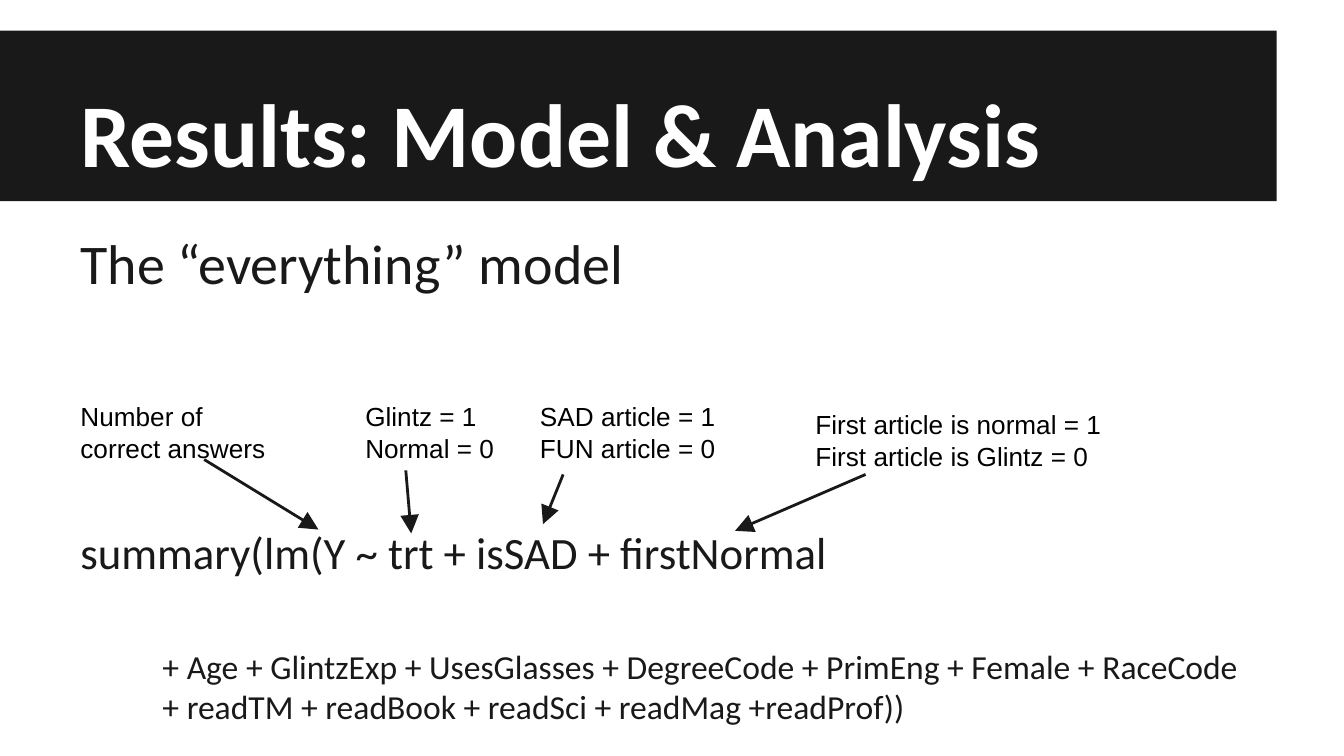
"""Builds the slide that explains the terms of the full regression model."""
from lxml import etree
from pptx import Presentation
from pptx.dml.color import RGBColor
from pptx.enum.shapes import MSO_CONNECTOR, MSO_SHAPE
from pptx.enum.text import MSO_ANCHOR
from pptx.oxml.ns import qn
from pptx.util import Pt

STRAIGHT = MSO_CONNECTOR.STRAIGHT
RECTANGLE = MSO_SHAPE.RECTANGLE
TOP, BOTTOM = MSO_ANCHOR.TOP, MSO_ANCHOR.BOTTOM

COLORS = {"ink": "191919", "title": "FFFFFF", "label": "000000"}
INSET = 7.2
MARGIN = 36
CONTENT_WIDTH = 648

TITLE = ["Results: Model & Analysis"]
HEADING = ["The “everything” model"]
FORMULA = ["summary(lm(Y ~ trt + isSAD + firstNormal"]
COVARIATES = [
    "+ Age + GlintzExp + UsesGlasses + DegreeCode + PrimEng + Female + RaceCode",
    "+ readTM + readBook + readSci + readMag +readProf))",
]
TERMS = [
    {"lines": ["Number of correct answers"], "box": (36, 207.4, 126),
     "arrow": (109.4, 246.2, 170.6, 283.7)},
    {"lines": ["Glintz = 1", "Normal = 0"], "box": (188.6, 207.4, 90),
     "arrow": (217.4, 252, 220.3, 285.8)},
    {"lines": ["SAD article = 1", "FUN article = 0"], "box": (282.2, 207.4, 126),
     "arrow": (301.7, 254.2, 290.9, 280.8)},
    {"lines": ["First article is normal = 1", "First article is Glintz = 0"],
     "box": (429.8, 211.7, 177), "arrow": (463.7, 254.2, 393.8, 284.4)},
]
LABEL_HEIGHT = 38.9


def add_text(slide, lines, box, size, color="ink", font="Calibri", bold=False, anchor=TOP):
    frame = slide.shapes.add_textbox(*map(Pt, box)).text_frame
    frame.word_wrap = True
    frame.vertical_anchor = anchor
    frame.margin_left = frame.margin_right = Pt(INSET)
    frame.margin_top = frame.margin_bottom = Pt(INSET)
    frame.text = "\n".join(lines)
    for paragraph in frame.paragraphs:
        for run in paragraph.runs:
            run.font.name = font
            run.font.size = Pt(size)
            run.font.bold = bold
            run.font.color.rgb = RGBColor.from_string(COLORS[color])


def add_arrow(slide, ends):
    arrow = slide.shapes.add_connector(STRAIGHT, *map(Pt, ends))
    arrow.line.color.rgb = RGBColor.from_string(COLORS["ink"])
    arrow.line.width = Pt(1.5)
    head = etree.SubElement(arrow.line._get_or_add_ln(), qn("a:tailEnd"))
    head.set("type", "triangle")
    head.set("w", "lg")
    head.set("len", "lg")
    etree.SubElement(arrow._element.spPr, qn("a:effectLst"))


def main():
    prs = Presentation()
    prs.slide_width, prs.slide_height = Pt(720), Pt(405)
    slide = prs.slides.add_slide(prs.slide_layouts[6])

    banner = slide.shapes.add_shape(RECTANGLE, Pt(0), Pt(16.4), Pt(684), Pt(91.4))
    banner.shadow.inherit = False
    banner.fill.solid()
    banner.fill.fore_color.rgb = RGBColor.from_string(COLORS["ink"])
    banner.line.fill.background()

    add_text(slide, TITLE, (MARGIN, 16.4, CONTENT_WIDTH, 90), 48, "title",
             bold=True, anchor=BOTTOM)
    add_text(slide, HEADING, (MARGIN, 115.2, CONTENT_WIDTH, 51), 30)
    add_text(slide, FORMULA, (MARGIN, 273.7, CONTENT_WIDTH, 44), 24)
    add_text(slide, COVARIATES, (80, 338.6, 620, 58), 18)

    for term in TERMS:
        add_text(slide, term["lines"], (*term["box"], LABEL_HEIGHT), 14, "label", "Arial")
        add_arrow(slide, term["arrow"])

    prs.save("out.pptx")


if __name__ == "__main__":
    main()
